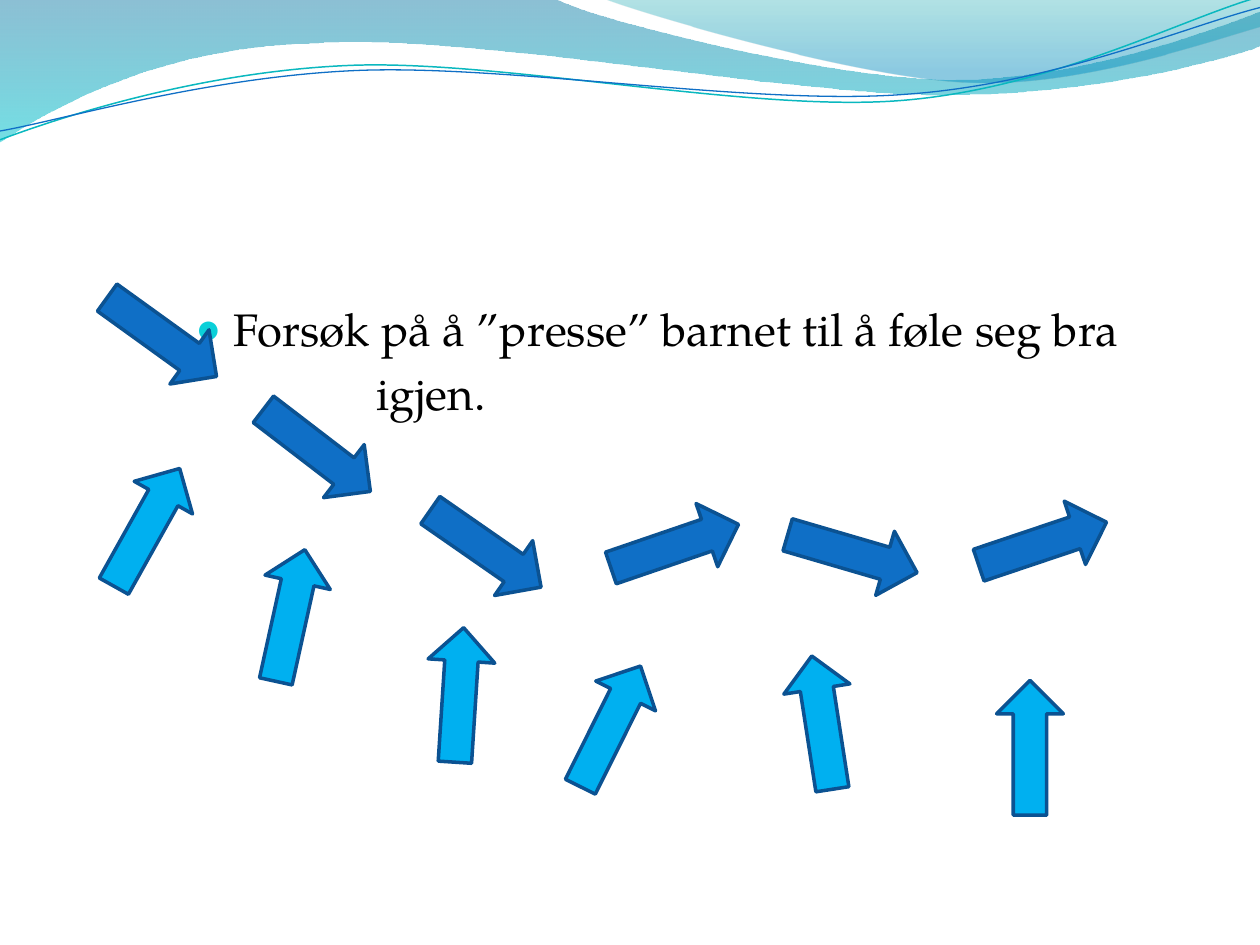
import pptx
import pptx.dml.color
import pptx.enum.shapes
import pptx.enum.text
import pptx.oxml.ns
import pptx.util
from lxml import etree

Inches = pptx.util.Inches
Pt = pptx.util.Pt
qn = pptx.oxml.ns.qn


def color(value):
    return pptx.dml.color.RGBColor.from_string(value)


def write_paragraph(paragraph, text, font="TeX Gyre Pagella", size=26, fill="000000",
                    left=0.3, hanging=0.0, bullet=None, bullet_color="0BD0D9"):
    run = paragraph.add_run()
    run.text = text
    run.font.name = font
    run.font.size = Pt(size)
    run.font.color.rgb = color(fill)
    paragraph.alignment = pptx.enum.text.PP_ALIGN.LEFT
    paragraph.space_before = Pt(5.2)
    properties = paragraph._p.get_or_add_pPr()
    properties.set("marL", str(Inches(left)))
    properties.set("indent", str(-Inches(hanging)))
    if bullet:
        bullet_fill = etree.SubElement(properties, qn("a:buClr"))
        etree.SubElement(bullet_fill, qn("a:srgbClr"), val=bullet_color)
        etree.SubElement(properties, qn("a:buSzPct"), val="95000")
        etree.SubElement(properties, qn("a:buChar"), char=bullet)
    else:
        etree.SubElement(properties, qn("a:buNone"))


presentation = pptx.Presentation()
presentation.slide_width = Inches(10)
presentation.slide_height = Inches(7.5)
slide = presentation.slides.add_slide(presentation.slide_layouts[1])
title = slide.shapes.title
title._element.getparent().remove(title._element)

# Waves: a pair is a straight step, six numbers are a Bézier curve
WAVES = [
    dict(start=(0, 0),
         steps=[(4.4, -0.01), (4.76, 0.17, 6.64, 0.63, 7.58, 0.63),
                (8.53, 0.63, 9.58, 0.26, 10, 0.09), (10.01, 0.36),
                (9.83, 0.44, 8.7, 0.76, 7.46, 0.75), (6.22, 0.75, 3.82, 0.28, 2.57, 0.34),
                (1.29, 0.36, 0.46, 0.83, -0.01, 1.13), (0, 0)],
         gradient=[(0, "0074A1", 45), (1, "00C6CF", 55)]),
    dict(start=(4.79, -0.01),
         steps=[(5.09, 0.11, 6.82, 0.62, 7.69, 0.65), (8.56, 0.69, 9.61, 0.32, 10, 0.21),
                (10, 0), (4.79, -0.01)],
         gradient=[(0, "00A1A9", 30), (0.8, "008BBF", 45)]),
    dict(start=(0, 1.11),
         steps=[(0.48, 0.93, 1.58, 0.57, 2.77, 0.52), (3.95, 0.47, 5.93, 0.89, 7.13, 0.8),
                (8.33, 0.71, 9.38, 0.15, 9.98, -0.02)],
         line=("0AB8BF", 0.85)),
    dict(start=(0, 1.04),
         steps=[(0.47, 0.96, 1.64, 0.61, 2.83, 0.56), (4.03, 0.51, 5.97, 0.84, 7.17, 0.75),
                (8.36, 0.67, 9.41, 0.21, 10, 0.06)],
         line=("0F6FC6", 0.75)),
]
for wave in WAVES:
    points = [(Inches(step[i]), Inches(step[i + 1]))
              for step in wave["steps"] for i in range(0, len(step), 2)]
    builder = slide.shapes.build_freeform(*map(Inches, wave["start"]))
    builder.add_line_segments(points, close="gradient" in wave)
    shape = builder.convert_to_shape()

    # Join each three control points into one curve
    segments = iter(list(shape._element.spPr.iter(qn("a:lnTo"))))
    for step in wave["steps"]:
        segment = next(segments)
        if len(step) == 6:
            segment.tag = qn("a:cubicBezTo")
            for _ in range(2):
                control = next(segments)
                segment.append(control[0])
                control.getparent().remove(control)

    shape.shadow.inherit = False
    if "gradient" in wave:
        shape.fill.gradient()
        shape.fill.gradient_angle = 270
        for stop, (position, value, _) in zip(shape.fill.gradient_stops, wave["gradient"]):
            stop.position = position
            stop.color.rgb = color(value)
        solid_colors = list(shape._element.spPr.iter(qn("a:srgbClr")))
        for solid, (_, _, opacity) in zip(solid_colors, wave["gradient"]):
            etree.SubElement(solid, qn("a:alpha"), val=str(opacity * 1000))
        shape.line.fill.background()
    else:
        shape.fill.background()
        shape.line.color.rgb = color(wave["line"][0])
        shape.line.width = Pt(wave["line"][1])

# Body text, in front of the waves
body = slide.placeholders[1]
slide.shapes._spTree.append(body._element)
body.left, body.top, body.width, body.height = map(Inches, (1.45, 2.34, 9, 4.8))
frame = body.text_frame
frame.auto_size = pptx.enum.text.MSO_AUTO_SIZE.NONE
frame.word_wrap = True
write_paragraph(frame.paragraphs[0], "Forsøk på å ”presse” barnet til å føle seg bra",
                hanging=0.3, bullet="●")
write_paragraph(frame.add_paragraph(), "igjen.", left=1.44)

# Arrows: left, top, rotation
DARK, LIGHT = "0F6FC6", "00B0F0"
ARROWS = [
    (0.75, 2.41, 35.8, DARK),
    (1.98, 3.31, 37.5, DARK),
    (3.32, 4.09, 34.8, DARK),
    (4.82, 4.07, 341.1, DARK),
    (3.11, 5.25, 273.7, LIGHT),
    (6.23, 4.13, 16.3, DARK),
    (4.31, 5.5, 296.5, LIGHT),
    (7.74, 4.05, 341.4, DARK),
    (5.99, 5.47, 261.2, LIGHT),
    (7.64, 5.67, 270, LIGHT),
    (0.63, 3.92, 299.2, LIGHT),
    (1.77, 4.62, 282.4, LIGHT),
]
for left, top, rotation, fill in ARROWS:
    arrow = slide.shapes.add_shape(pptx.enum.shapes.MSO_SHAPE.RIGHT_ARROW,
                                   Inches(left), Inches(top), Inches(1.07), Inches(0.53))
    arrow.rotation = rotation
    arrow.shadow.inherit = False
    arrow.fill.solid()
    arrow.fill.fore_color.rgb = color(fill)
    arrow.line.color.rgb = color("0B5292")
    arrow.line.width = Pt(2)

presentation.save("out.pptx")
